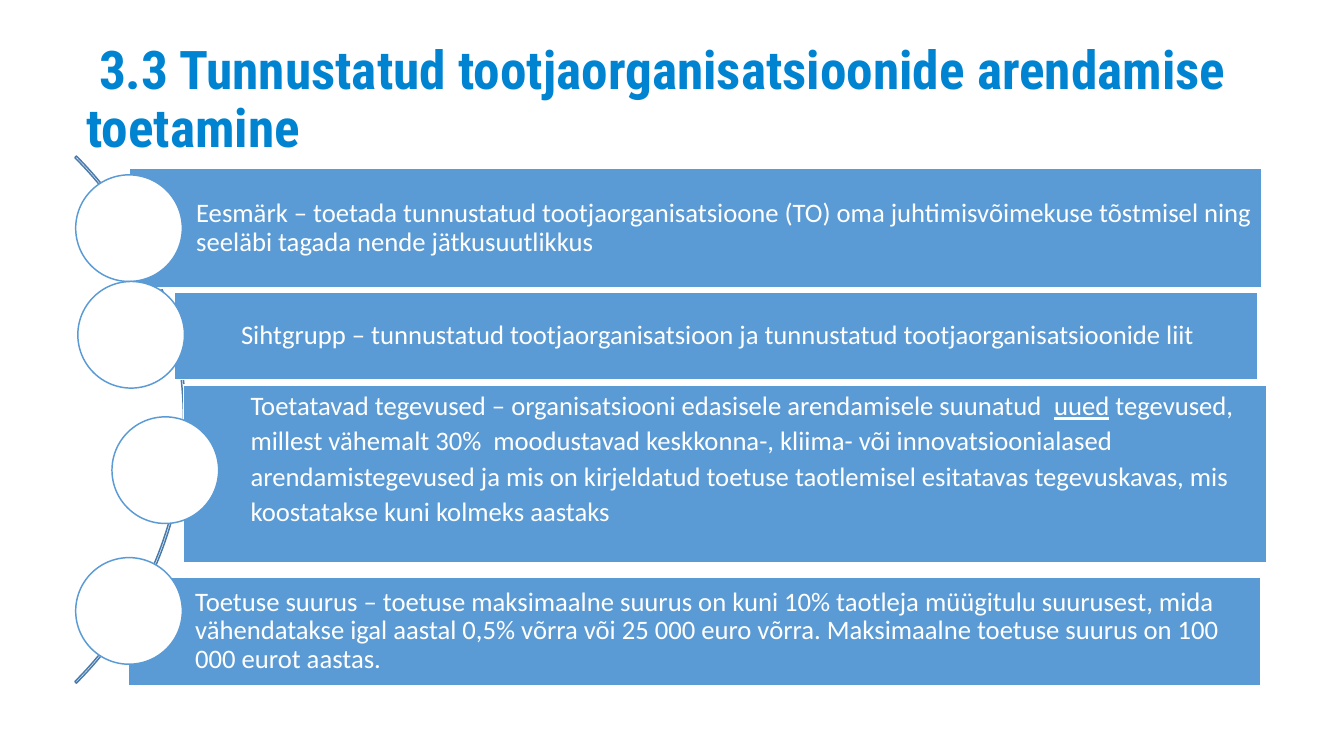
from dataclasses import dataclass

from pptx import Presentation
from pptx.dml.color import RGBColor
from pptx.enum import shapes, text
from pptx.util import Inches, Pt


@dataclass(frozen=True)
class Theme:
    title_color: RGBColor = RGBColor(0x00, 0x84, 0xD1)
    bar_color: RGBColor = RGBColor(0x5B, 0x9B, 0xD5)
    arc_color: RGBColor = RGBColor(0x49, 0x7C, 0xAB)
    white: RGBColor = RGBColor(0xFF, 0xFF, 0xFF)
    title_font: str = "Roboto Condensed"
    body_font: str = "Calibri"
    title_size: int = 36
    body_size: int = 18
    line_width: int = 1


THEME = Theme()
TITLE = "3.3 Tunnustatud tootjaorganisatsioonide arendamise toetamine"
CIRCLE_SIZE = 1


@dataclass(frozen=True)
class Topic:
    bar: tuple
    circle: tuple
    spans: tuple  # (wording, underlined) pairs
    line_spacing: float = 0.9
    anchor: text.MSO_ANCHOR = text.MSO_ANCHOR.MIDDLE
    top_inset: float = 0.05


TOPICS = (
    Topic((1.21, 1.58, 10.62, 1.12), (0.71, 1.64), (
        ("Eesmärk – toetada tunnustatud tootjaorganisatsioone (TO) oma "
         "juhtimisvõimekuse tõstmisel ning seeläbi tagada nende "
         "jätkusuutlikkus", False),
    )),
    Topic((1.63, 2.74, 10.16, 0.82), (0.73, 2.64), (
        ("Sihtgrupp – tunnustatud tootjaorganisatsioon ja tunnustatud "
         "tootjaorganisatsioonide liit", False),
    )),
    Topic((1.72, 3.61, 10.16, 1.67), (1.05, 3.91), (
        ("Toetatavad tegevused – organisatsiooni edasisele arendamisele "
         "suunatud  ", False),
        ("uued", True),
        (" tegevused, millest vähemalt 30%  moodustavad keskkonna-, kliima- "
         "või innovatsioonialased arendamistegevused ja mis on kirjeldatud "
         "toetuse taotlemisel esitatavas tegevuskavas, mis koostatakse kuni "
         "kolmeks aastaks", False),
    ), line_spacing=1.1, anchor=text.MSO_ANCHOR.TOP, top_inset=0.01),
    Topic((1.2, 5.41, 10.62, 1.02), (0.71, 5.23), (
        ("Toetuse suurus – toetuse maksimaalne suurus on kuni 10% taotleja "
         "müügitulu suurusest, mida vähendatakse igal aastal 0,5% võrra või "
         "25 000 euro võrra. Maksimaalne toetuse suurus on 100 000 eurot "
         "aastas.", False),
    )),
)


def add_span(para, wording, font, size, color):
    span = para.add_run()
    span.text = wording
    span.font.name = font
    span.font.size = Pt(size)
    span.font.color.rgb = color
    return span


def add_outlined(page, kind, place, line_color, fill_color=None):
    """Add a preset shape; without a fill colour it stays hollow."""
    shape = page.shapes.add_shape(kind, *map(Inches, place))
    shape.shadow.inherit = False
    if fill_color is None:
        shape.fill.background()
    else:
        shape.fill.solid()
        shape.fill.fore_color.rgb = fill_color
    shape.line.color.rgb = line_color
    shape.line.width = Pt(THEME.line_width)
    return shape


def add_title(page):
    box = page.shapes.add_textbox(*map(Inches, (0.71, 0.56, 11.09, 0.78)))
    frame = box.text_frame
    frame.word_wrap = True
    frame.vertical_anchor = text.MSO_ANCHOR.MIDDLE
    para = frame.paragraphs[0]
    para.line_spacing = 0.9
    para._p.get_or_add_pPr().set("indent", str(Inches(0.12)))
    span = add_span(para, TITLE, THEME.title_font, THEME.title_size,
                    THEME.title_color)
    span.font.bold = True


def add_arc(page):
    arc = add_outlined(page, shapes.MSO_SHAPE.BLOCK_ARC,
                       (-5.25, 0.44, 6.99, 6.99), THEME.arc_color)
    for index, value in enumerate((189, 27, 0.003)):
        arc.adjustments[index] = value


def add_bar(page, topic):
    bar = add_outlined(page, shapes.MSO_SHAPE.RECTANGLE, topic.bar,
                       THEME.white, THEME.bar_color)
    frame = bar.text_frame
    frame.word_wrap = True
    frame.vertical_anchor = topic.anchor
    frame.margin_left = Inches(0.63)
    frame.margin_top = Inches(topic.top_inset)
    frame.margin_right = frame.margin_bottom = Inches(0.05)
    para = frame.paragraphs[0]
    para.alignment = text.PP_ALIGN.LEFT
    para.line_spacing = topic.line_spacing
    for wording, underlined in topic.spans:
        span = add_span(para, wording, THEME.body_font, THEME.body_size,
                        THEME.white)
        span.font.underline = underlined


def add_circle(page, topic):
    add_outlined(page, shapes.MSO_SHAPE.OVAL,
                 (*topic.circle, CIRCLE_SIZE, CIRCLE_SIZE),
                 THEME.bar_color, THEME.white)


def main():
    deck = Presentation()
    deck.slide_width = Inches(12.6)
    deck.slide_height = Inches(7.09)
    page = deck.slides.add_slide(deck.slide_layouts[6])
    add_title(page)
    add_arc(page)
    for topic in TOPICS:
        add_bar(page, topic)
        add_circle(page, topic)
    deck.save("out.pptx")


if __name__ == "__main__":
    main()
